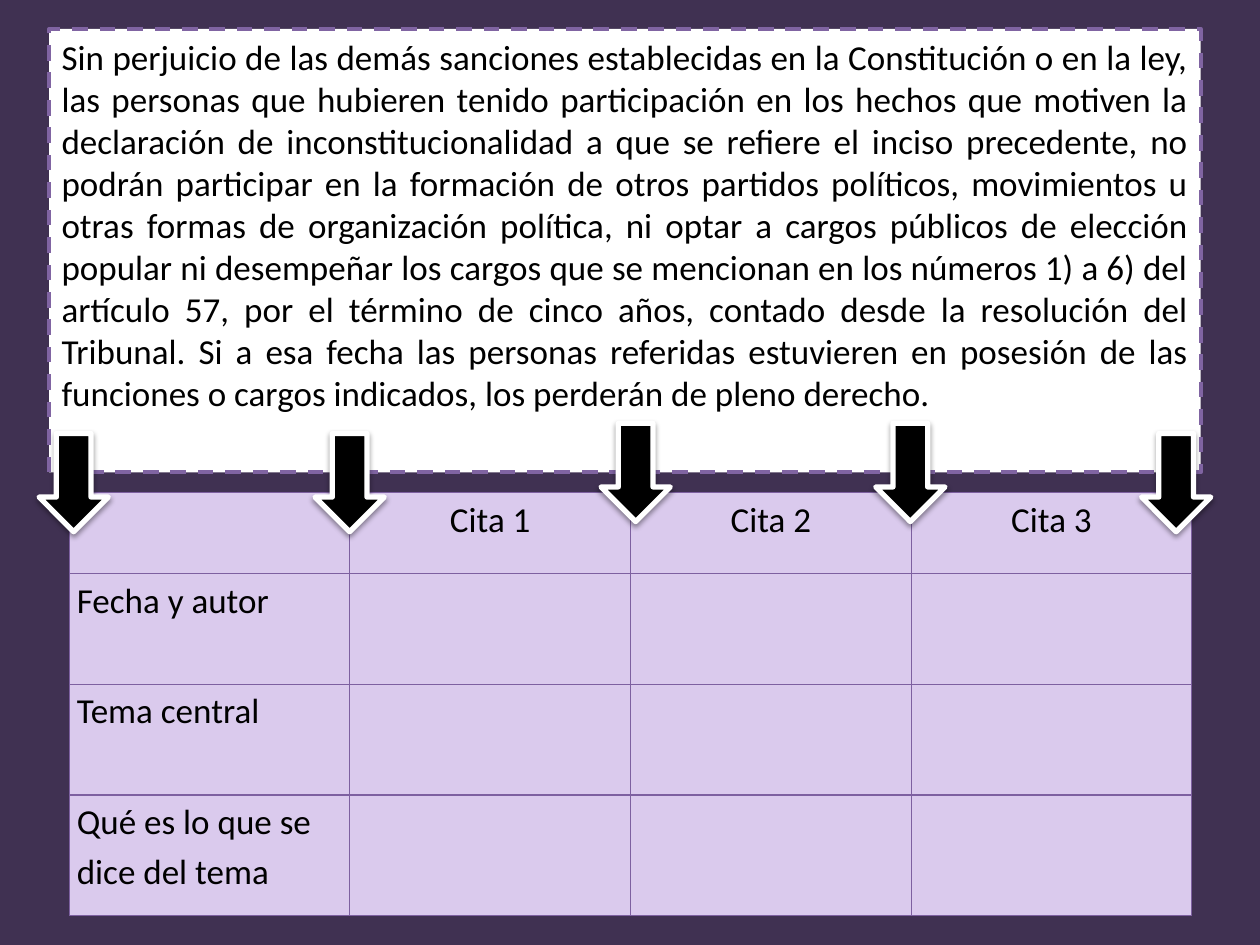
from pptx import Presentation
from pptx.dml.color import RGBColor
from pptx.enum.dml import MSO_LINE
from pptx.enum.shapes import MSO_SHAPE
from pptx.enum.text import MSO_ANCHOR, PP_ALIGN
from pptx.oxml import parse_xml
from pptx.oxml.ns import nsdecls
from pptx.util import Inches, Pt

RECTANGLE, DOWN_ARROW = MSO_SHAPE.RECTANGLE, MSO_SHAPE.DOWN_ARROW
LEFT, CENTER, JUSTIFY = PP_ALIGN.LEFT, PP_ALIGN.CENTER, PP_ALIGN.JUSTIFY
TOP = MSO_ANCHOR.TOP
DASH = MSO_LINE.DASH

COLORS = {
    "background": "403152",
    "paper": "FFFFFF",
    "frame": "8064A2",
    "cell": "DACAED",
    "border": "7D60A0",
    "ink": "000000",
}
GRID_UNIT = Inches(0.1)  # the slide is 100 columns by 75 rows
COLUMNS, ROWS = 100, 75

ARTICLE = (
    "Sin perjuicio de las demás sanciones establecidas en la Constitución o en la ley, "
    "las personas que hubieren tenido participación en los hechos que motiven la "
    "declaración de inconstitucionalidad a que se refiere el inciso precedente, no "
    "podrán participar en la formación de otros partidos políticos, movimientos u "
    "otras formas de organización política, ni optar a cargos públicos de elección "
    "popular ni desempeñar los cargos que se mencionan en los números 1) a 6) del "
    "artículo 57, por el término de cinco años, contado desde la resolución del "
    "Tribunal. Si a esa fecha las personas referidas estuvieren en posesión de las "
    "funciones o cargos indicados, los perderán de pleno derecho."
)
QUOTE_HEADERS = ["", "Cita 1", "Cita 2", "Cita 3"]
ROW_LABELS = ["Fecha y autor", "Tema central", "Qué es lo que se dice del tema"]
ROW_HEIGHTS = [6.4, 8.8, 8.8, 9.6]
ARROW_POSITIONS = [(3.1, 34.4), (25, 34.4), (47.7, 33.6), (90.6, 34.4), (69.5, 33.6)]


def grid(*lengths):
    """Turn grid units into slide lengths."""
    return [round(length * GRID_UNIT) for length in lengths]


def color(name):
    return RGBColor.from_string(COLORS[name])


class SlideBuilder:
    font_name = "Calibri"
    font_size = Pt(20)

    def __init__(self, presentation):
        self.slide = presentation.slides.add_slide(presentation.slide_layouts[6])
        fill = self.slide.background.fill
        fill.solid()
        fill.fore_color.rgb = color("background")

    def set_text(self, text_frame, text, alignment):
        text_frame.text = text
        paragraph = text_frame.paragraphs[0]
        paragraph.alignment = alignment
        for run in paragraph.runs:
            run.font.name = self.font_name
            run.font.size = self.font_size
            run.font.color.rgb = color("ink")
        return paragraph

    def shape(self, kind, box, fill, line, line_width):
        shape = self.slide.shapes.add_shape(kind, *grid(*box))
        shape.shadow.inherit = False
        shape.fill.solid()
        shape.fill.fore_color.rgb = color(fill)
        shape.line.color.rgb = color(line)
        shape.line.width = Pt(line_width)
        return shape

    def text_panel(self, box, text):
        panel = self.shape(RECTANGLE, box, "paper", "frame", 2.25)
        panel.line.dash_style = DASH
        panel.text_frame.word_wrap = True
        panel.text_frame.vertical_anchor = TOP
        self.set_text(panel.text_frame, text, JUSTIFY).space_after = Pt(10)

    def arrow(self, left, top):
        arrow = self.shape(DOWN_ARROW, (left, top, 5.5, 7.8), "ink", "paper", 3)
        effects = arrow.element.spPr.find("{*}effectLst")
        effects.append(parse_xml(
            f'<a:outerShdw {nsdecls("a")} blurRad="{Pt(3.1)}" dist="{Pt(1.6)}" '
            f'dir="5400000" rotWithShape="0"><a:srgbClr val="{COLORS["ink"]}">'
            '<a:alpha val="38000"/></a:srgbClr></a:outerShdw>'))

    def cell_borders(self, cell):
        properties = cell._tc.get_or_add_tcPr()
        for index, side in enumerate(("lnL", "lnR", "lnT", "lnB")):
            border = parse_xml(
                f'<a:{side} {nsdecls("a")} w="{Pt(0.75)}"><a:solidFill>'
                f'<a:srgbClr val="{COLORS["border"]}"/></a:solidFill></a:{side}>')
            properties.insert(index, border)

    def table(self, box, headers, labels, row_heights):
        table = self.slide.shapes.add_table(
            len(row_heights), len(headers), *grid(*box)).table
        for row, height in zip(table.rows, grid(*row_heights)):
            row.height = height
        texts = [headers] + [[label] + [""] * (len(headers) - 1) for label in labels]
        for row_index, row_texts in enumerate(texts):
            for column_index, text in enumerate(row_texts):
                cell = table.cell(row_index, column_index)
                cell.fill.solid()
                cell.fill.fore_color.rgb = color("cell")
                self.cell_borders(cell)
                cell.margin_left = cell.margin_right = Inches(0.06)
                cell.margin_top = cell.margin_bottom = 0
                alignment = LEFT if column_index == 0 else CENTER
                self.set_text(cell.text_frame, text, alignment).line_spacing = 1.15


def main():
    presentation = Presentation()
    presentation.slide_width, presentation.slide_height = grid(COLUMNS, ROWS)
    builder = SlideBuilder(presentation)
    builder.text_panel((3.9, 2.3, 91.4, 35.2), ARTICLE)
    builder.table((5.5, 39.1, 89.1, sum(ROW_HEIGHTS)),
                  QUOTE_HEADERS, ROW_LABELS, ROW_HEIGHTS)
    for left, top in ARROW_POSITIONS:
        builder.arrow(left, top)
    presentation.save("out.pptx")


if __name__ == "__main__":
    main()
